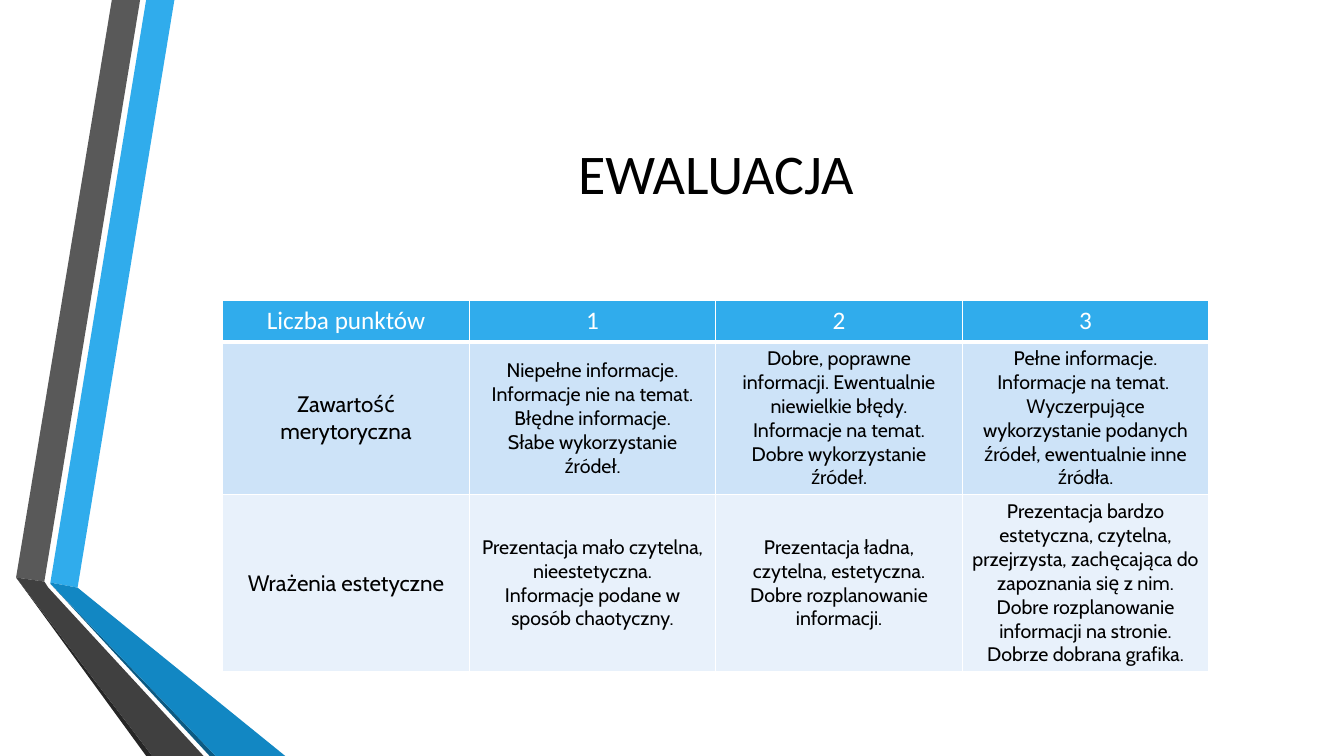
import pptx
import pptx.dml.color
import pptx.enum.text
import pptx.oxml
import pptx.oxml.ns
import pptx.util
from pptx.util import Inches

COLORS = {
    "blue": "30ACEC", "blue_mid": "1287C3", "blue_dark": "0C5A82",
    "gray": "595959", "gray_mid": "404040", "gray_dark": "262626",
    "row_dark": "CDE3F8", "row_light": "E8F1FB",
    "white": "FFFFFF", "black": "000000",
}


def rgb(name):
    return pptx.dml.color.RGBColor.from_string(COLORS[name])


def write(frame, lines, size, font, color):
    """Fill a text frame with centred paragraphs in one format."""
    frame.word_wrap = True
    for index, line in enumerate(lines):
        para = frame.paragraphs[0] if index == 0 else frame.add_paragraph()
        para.alignment = pptx.enum.text.PP_ALIGN.CENTER
        span = para.add_run()
        span.text = line
        span.font.color.rgb = rgb(color)
        for name, value in {"size": pptx.util.Pt(size), "name": font, "bold": False}.items():
            setattr(span.font, name, value)


deck = pptx.Presentation()
deck.slide_width, deck.slide_height = Inches(13.33), Inches(7.5)
page = deck.slides.add_slide(deck.slide_layouts[6])

# Folded ribbons on the left
ribbons = [
    ("blue", [(0.5, 5.78), (0.77, 5.83), (1.73, 0), (1.45, 0)]),
    ("gray", [(1.39, 0), (1.11, 0), (0.16, 5.73), (0.44, 5.77)]),
    ("gray_dark", [(0.16, 5.73), (1.45, 7.5), (1.51, 7.5)]),
    ("blue_dark", [(0.5, 5.79), (2.08, 7.5), (2.14, 7.5)]),
    ("blue_mid", [(0.5, 5.78), (0.5, 5.79), (2.14, 7.5), (2.83, 7.5), (0.77, 5.83)]),
    ("gray_mid", [(2.02, 7.5), (0.48, 5.83), (0.44, 5.77), (0.16, 5.73), (1.51, 7.5)]),
]
for color, points in ribbons:
    corners = [(Inches(x), Inches(y)) for x, y in points]
    builder = page.shapes.build_freeform(*corners[0])
    builder.add_line_segments(corners[1:], close=True)
    ribbon = builder.convert_to_shape()
    ribbon.shadow.inherit = False
    ribbon.fill.solid()
    ribbon.fill.fore_color.rgb = rgb(color)
    ribbon.line.fill.background()

# Title
title = page.shapes.add_textbox(Inches(1.62), Inches(0.75), Inches(10.96), Inches(1.92))
title.text_frame.vertical_anchor = pptx.enum.text.MSO_ANCHOR.MIDDLE
write(title.text_frame, ["EWALUACJA"], 40, "Calibri", "black")

# Evaluation table
criteria = [
    [["Liczba punktów"], ["1"], ["2"], ["3"]],
    [
        ["Zawartość merytoryczna"],
        ["Niepełne informacje.", "Informacje nie na temat. Błędne informacje.",
         "Słabe wykorzystanie źródeł."],
        ["Dobre, poprawne informacji. Ewentualnie niewielkie błędy.",
         "Informacje na temat. Dobre wykorzystanie źródeł."],
        ["Pełne informacje.", "Informacje na temat. ",
         "Wyczerpujące wykorzystanie podanych źródeł, ewentualnie inne źródła."],
    ],
    [
        ["Wrażenia estetyczne"],
        ["Prezentacja mało czytelna, nieestetyczna.",
         "Informacje podane w sposób chaotyczny."],
        ["Prezentacja ładna, czytelna, estetyczna.", "Dobre rozplanowanie informacji."],
        ["Prezentacja bardzo estetyczna, czytelna, przejrzysta, zachęcająca do "
         "zapoznania się z nim.",
         "Dobre rozplanowanie informacji na stronie. Dobrze dobrana grafika."],
    ],
]
row_heights = [0.41, 1.52, 1.75]
row_fills = ["blue", "row_dark", "row_light"]
table = page.shapes.add_table(
    3, 4, Inches(2.21), Inches(2.98), Inches(9.78), Inches(sum(row_heights))
).table
for column in table.columns:
    column.width = Inches(9.78 / 4)

for r, row in enumerate(criteria):
    table.rows[r].height = Inches(row_heights[r])
    for c, lines in enumerate(row):
        cell = table.cell(r, c)
        if r == 0:
            write(cell.text_frame, lines, 18, "Calibri", "white")
        else:
            cell.vertical_anchor = pptx.enum.text.MSO_ANCHOR.MIDDLE
            write(cell.text_frame, lines, 16 if c == 0 else 14, "Cabin", "black")
        for side in "LRTB":
            width = 3 if r == 0 and side == "B" else 1
            cell._tc.get_or_add_tcPr().append(pptx.oxml.parse_xml(
                f'<a:ln{side} {pptx.oxml.ns.nsdecls("a")} w="{pptx.util.Pt(width)}">'
                f'<a:solidFill><a:srgbClr val="{COLORS["white"]}"/></a:solidFill></a:ln{side}>'
            ))
        cell.fill.solid()
        cell.fill.fore_color.rgb = rgb(row_fills[r])

deck.save("out.pptx")
